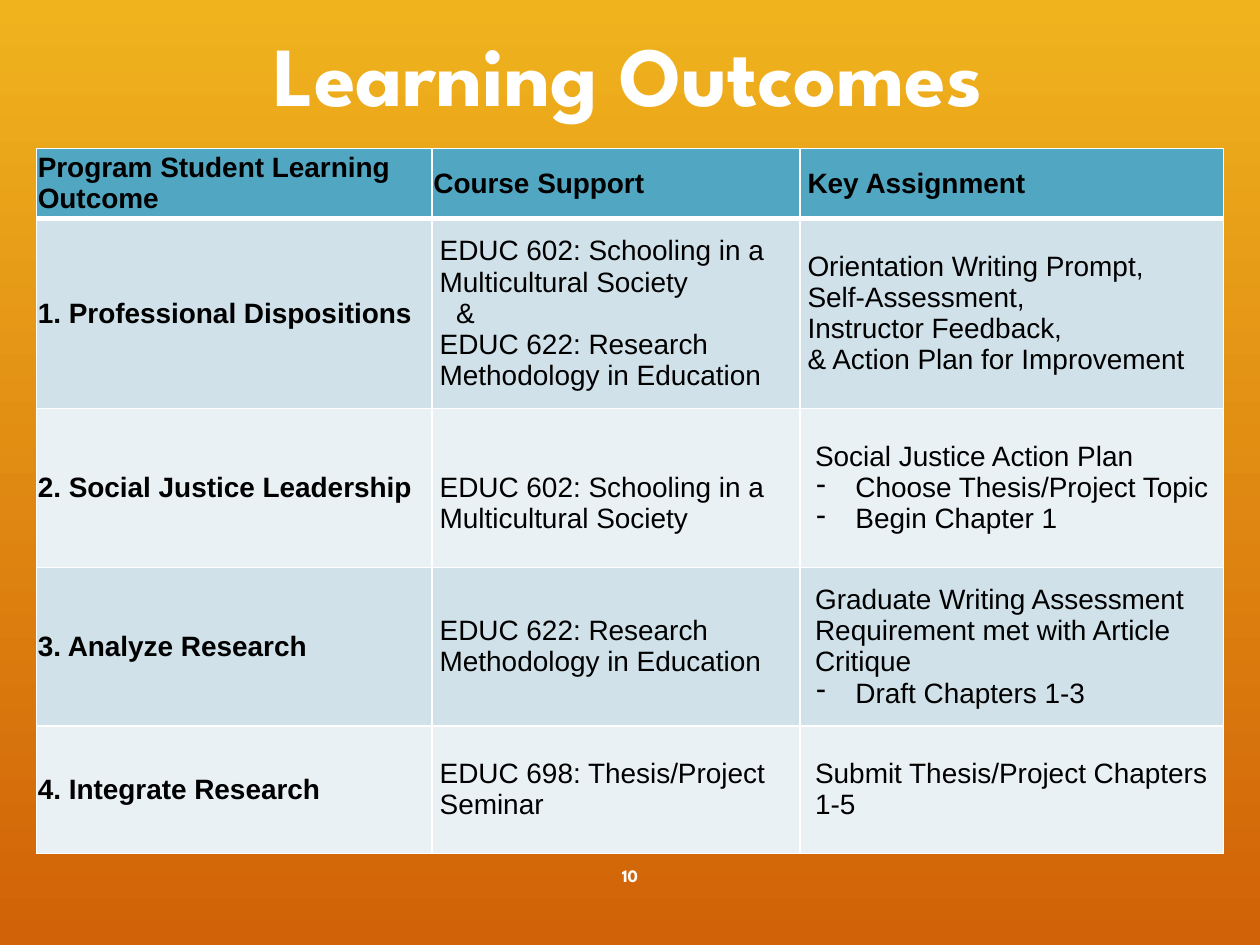
"""Build the Learning Outcomes slide with its table of courses and assignments."""
from lxml import etree
from pptx import Presentation
from pptx.dml.color import RGBColor
from pptx.enum.text import MSO_ANCHOR, PP_ALIGN
from pptx.oxml.ns import qn
from pptx.util import Inches, Pt

MIDDLE = MSO_ANCHOR.MIDDLE
LEFT, CENTER = PP_ALIGN.LEFT, PP_ALIGN.CENTER
WHITE = RGBColor(0xFF, 0xFF, 0xFF)
BLACK = RGBColor(0, 0, 0)
GOLD = RGBColor(0xF0, 0xB3, 0x1E)
ORANGE = RGBColor(0xD1, 0x62, 0x07)
HEADER_BLUE = RGBColor(0x51, 0xA6, 0xC2)
BAND_COLORS = (RGBColor(0xE9, 0xF1, 0xF4), RGBColor(0xD0, 0xE1, 0xE9))
DISPLAY_FONT, BODY_FONT = "League Spartan", "Arial"

TITLE = "Learning Outcomes"
PAGE_NUMBER = "10"
COLUMN_WIDTHS = (3.14, 2.92, 3.36)
ROW_HEIGHTS = (0.52, 1.51, 1.26, 1.26, 1.01)
CELL_INSET = 0.01
LOWERED_CELL = (2, 1)
LOWERED_INSET = 0.26

FLUSH = {"indent": 0}
NEAR = {"indent": 0.05}
FAR = {"indent": 0.11}
AMPERSAND = {"indent": 0.18}
DASH = {"indent": 0.43, "hanging": 0.31, "bullet": "-"}

ROWS = [
    [
        [("Program Student Learning Outcome", FLUSH)],
        [("Course Support", FLUSH)],
        [("Key Assignment", NEAR)],
    ],
    [
        [("1. Professional Dispositions", FLUSH)],
        [
            ("EDUC 602: Schooling in a Multicultural Society", NEAR),
            ("&", AMPERSAND),
            ("EDUC 622: Research Methodology in Education", NEAR),
        ],
        [
            ("Orientation Writing Prompt,", NEAR),
            ("Self-Assessment,", NEAR),
            ("Instructor Feedback,", NEAR),
            ("& Action Plan for Improvement", NEAR),
        ],
    ],
    [
        [("2. Social Justice Leadership", FLUSH)],
        [("EDUC 602: Schooling in a Multicultural Society", NEAR)],
        [
            ("Social Justice Action Plan", FAR),
            ("Choose Thesis/Project Topic", DASH),
            ("Begin Chapter 1", DASH),
        ],
    ],
    [
        [("3. Analyze Research", FLUSH)],
        [("EDUC 622: Research Methodology in Education", NEAR)],
        [
            ("Graduate Writing Assessment Requirement met with Article Critique", FAR),
            ("Draft Chapters 1-3", DASH),
        ],
    ],
    [
        [("4. Integrate Research", FLUSH)],
        [("EDUC 698: Thesis/Project Seminar", NEAR)],
        [("Submit Thesis/Project Chapters 1-5", FAR)],
    ],
]


def write_text(paragraph, text, *, size, font, color, bold=False, align=LEFT,
               indent=0, hanging=0, bullet=None):
    properties = paragraph._p.get_or_add_pPr()
    properties.set("marL", str(Inches(indent)))
    properties.set("indent", str(-Inches(hanging)))
    if bullet:
        etree.SubElement(properties, qn("a:buChar")).set("char", bullet)
    else:
        etree.SubElement(properties, qn("a:buNone"))
    paragraph.alignment = align
    run = paragraph.add_run()
    run.text = text
    run.font.size = Pt(size)
    run.font.name = font
    run.font.bold = bold
    run.font.color.rgb = color


def add_borders(cell, row_index):
    widths = {
        "a:lnL": 1,
        "a:lnR": 1,
        "a:lnT": 3 if row_index == 1 else 1,
        "a:lnB": 3 if row_index == 0 else 1,
    }
    properties = cell._tc.get_or_add_tcPr()
    for tag, width in widths.items():
        line = etree.SubElement(properties, qn(tag), w=str(Pt(width)))
        fill = etree.SubElement(line, qn("a:solidFill"))
        etree.SubElement(fill, qn("a:srgbClr"), val=str(WHITE))


def set_background(slide):
    fill = slide.background.fill
    fill.gradient()
    fill.gradient_angle = 270
    for stop, color, position in zip(fill.gradient_stops, (GOLD, ORANGE), (0, 1)):
        stop.color.rgb = color
        stop.position = position


def add_title(slide):
    title = slide.shapes.title
    title.left, title.top = Inches(0.27), Inches(0.1)
    title.width, title.height = Inches(9.43), Inches(1.65)
    frame = title.text_frame
    frame.vertical_anchor = MIDDLE
    frame.margin_bottom = Inches(0.67)
    paragraph = frame.paragraphs[0]
    paragraph.line_spacing = 0.95
    write_text(paragraph, TITLE, size=48, font=DISPLAY_FONT, color=WHITE,
               bold=True, align=CENTER)


def add_page_number(slide):
    box = slide.shapes.add_textbox(Inches(4.71), Inches(6.75), Inches(0.58), Inches(0.4))
    frame = box.text_frame
    frame.word_wrap = True
    frame.vertical_anchor = MIDDLE
    write_text(frame.paragraphs[0], PAGE_NUMBER, size=10, font=DISPLAY_FONT,
               color=WHITE, bold=True, align=CENTER)


def fill_cell(cell, row_index, column_index, paragraphs):
    is_header = row_index == 0
    cell.margin_left = cell.margin_right = Inches(CELL_INSET)
    cell.margin_top = cell.margin_bottom = Inches(CELL_INSET)
    if (row_index, column_index) == LOWERED_CELL:
        cell.margin_top = Inches(LOWERED_INSET)
    cell.vertical_anchor = MIDDLE
    add_borders(cell, row_index)
    cell.fill.solid()
    cell.fill.fore_color.rgb = HEADER_BLUE if is_header else BAND_COLORS[row_index % 2]
    frame = cell.text_frame
    for index, (text, layout) in enumerate(paragraphs):
        paragraph = frame.add_paragraph() if index else frame.paragraphs[0]
        write_text(paragraph, text, size=16, font=BODY_FONT, color=BLACK,
                   bold=is_header or column_index == 0, **layout)


def add_outcomes_table(slide):
    table = slide.shapes.add_table(
        len(ROW_HEIGHTS), len(COLUMN_WIDTHS), Inches(0.29), Inches(1.18),
        Inches(sum(COLUMN_WIDTHS)), Inches(sum(ROW_HEIGHTS))).table
    for column, width in zip(table.columns, COLUMN_WIDTHS):
        column.width = Inches(width)
    for row, height in zip(table.rows, ROW_HEIGHTS):
        row.height = Inches(height)
    for row_index, row in enumerate(ROWS):
        for column_index, paragraphs in enumerate(row):
            cell = table.cell(row_index, column_index)
            fill_cell(cell, row_index, column_index, paragraphs)


def main():
    presentation = Presentation()
    presentation.slide_width, presentation.slide_height = Inches(10), Inches(7.5)
    slide = presentation.slides.add_slide(presentation.slide_layouts[5])
    set_background(slide)
    add_title(slide)
    add_page_number(slide)
    add_outcomes_table(slide)
    presentation.save("out.pptx")


if __name__ == "__main__":
    main()
